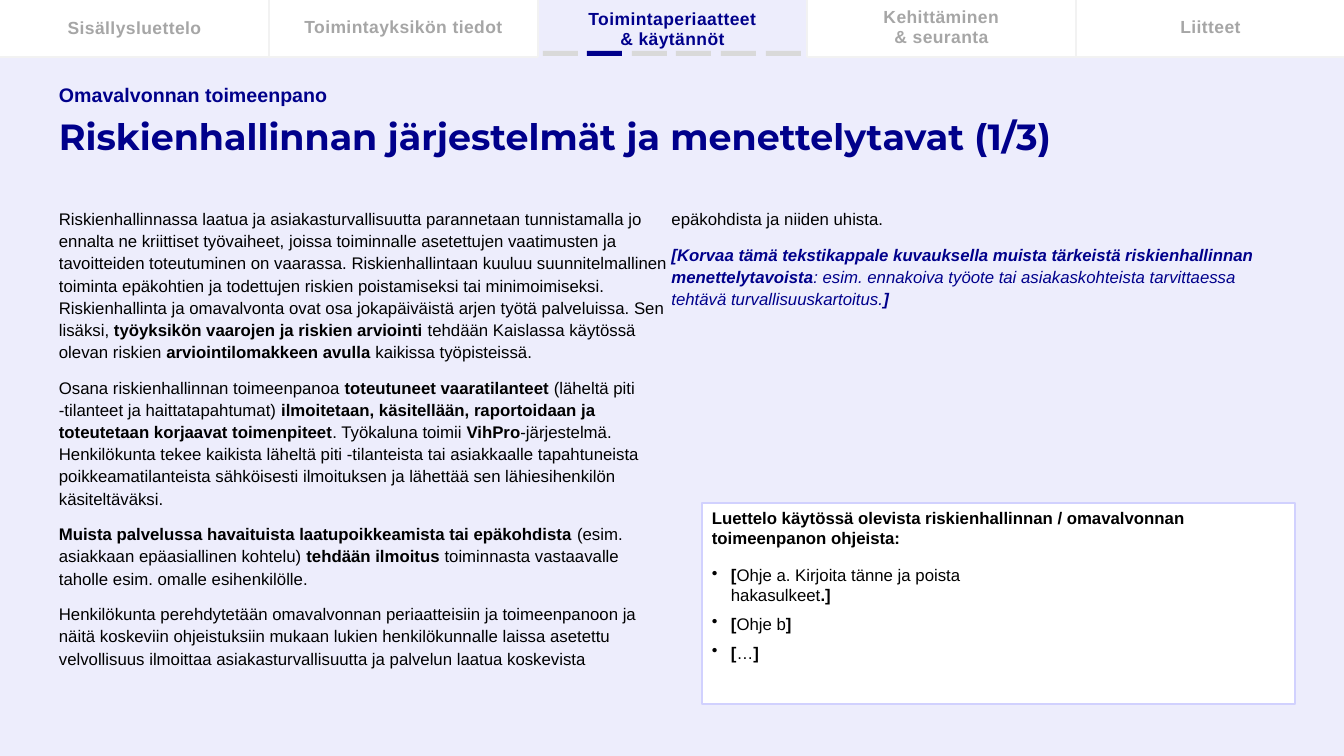
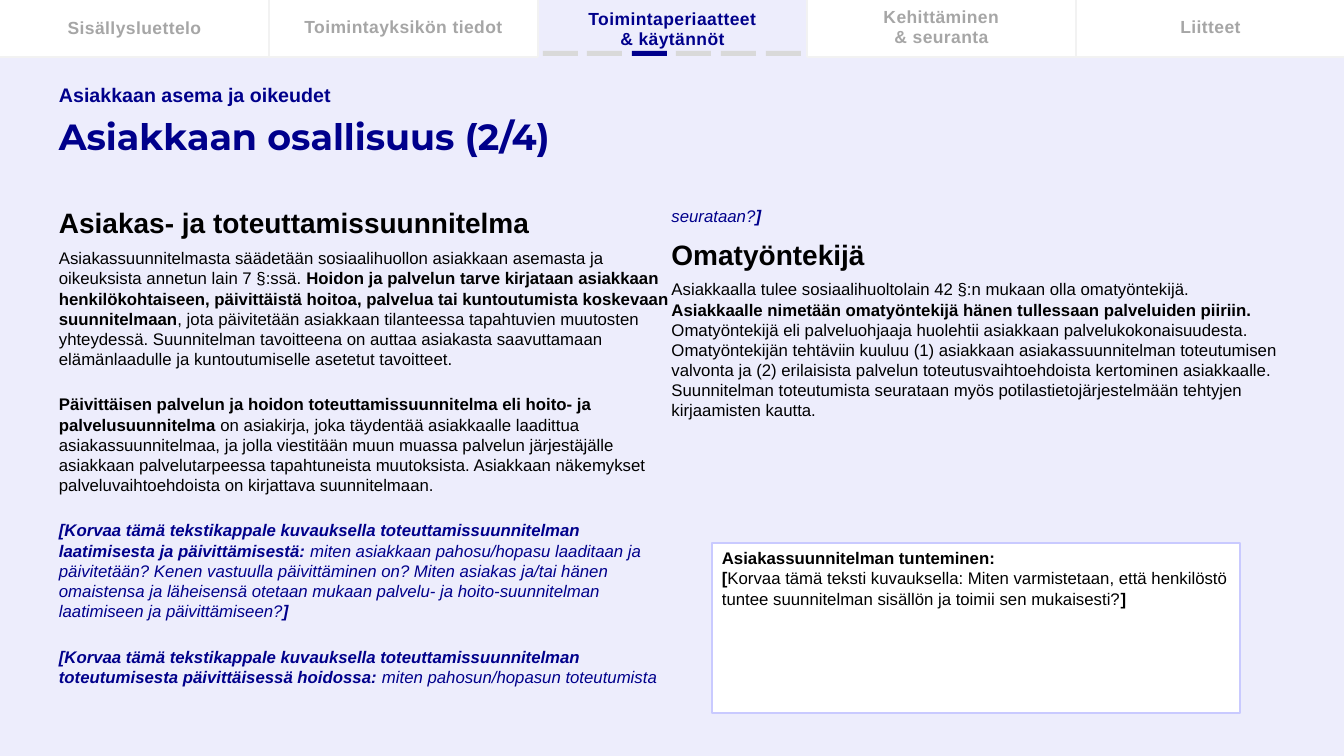
"""Build two self-monitoring plan slides with a shared tab header."""
import lxml.etree
import pptx
import pptx.dml.color
import pptx.enum.shapes
import pptx.enum.text
import pptx.oxml.ns
import pptx.util

EMU_PER_PX = 12192000 / 1344
WIDTH, HEIGHT = 1344, 756
NAVY, BLACK, WHITE, GREY = "00008B", "000000", "FFFFFF", "A6A6A6"
BACKGROUND, DIVIDER, STEP = "EDEDFC", "F2F2F2", "D9D9D9"

TABS = [
    ("Sisällysluettelo", 57),
    ("Toimintayksikön tiedot", 54),
    ("Toimintaperiaatteet\v& käytännöt", 58),
    ("Kehittäminen\v& seuranta", 55),
    ("Liitteet", 54),
]
ACTIVE_TAB = 2
TAB_WIDTH, TAB_HEIGHT = 269, 57
STEP_COUNT, STEP_LEFT, STEP_SPAN = 6, 543, 223

STYLES = {
    "tab": {"size": 12.5, "color": GREY, "bold": True, "align": "CENTER",
            "line": pptx.util.Pt(14), "tracking": 30},
    "topic": {"size": 14, "color": NAVY, "bold": True},
    "title": {"size": 26, "color": NAVY, "bold": True, "font": "Montserrat", "line": 0.9},
    "loose": {"line": 1.1, "before": 7.9, "after": 1.8},
    "loose prompt": {"line": 1.1, "before": 7.9, "after": 1.8, "color": NAVY, "italic": True},
    "heading": {"size": 20, "bold": True, "before": 6, "after": 6},
    "tight": {"after": 1.8},
    "spaced": {"before": 16.2, "after": 1.8},
    "prompt": {"before": 16.2, "after": 1.8, "color": NAVY, "italic": True},
    "plain": {},
    "bullet": {"after": 6, "bullet": "•"},
}
STYLES["active tab"] = {**STYLES["tab"], "color": NAVY}

SLIDES = [
    {
        "topic": "Omavalvonnan toimeenpano",
        "title": "Riskienhallinnan järjestelmät ja menettelytavat (1/3)",
        "step": 1,
        "body_area": (49, 202, 1245, 482),
        "body": [
            ("loose", "Riskienhallinnassa laatua ja asiakasturvallisuutta parannetaan tunnistamalla jo "
             "ennalta ne kriittiset työvaiheet, joissa toiminnalle asetettujen vaatimusten ja "
             "tavoitteiden toteutuminen on vaarassa. Riskienhallintaan kuuluu suunnitelmallinen "
             "toiminta epäkohtien ja todettujen riskien poistamiseksi tai minimoimiseksi. "
             "Riskienhallinta ja omavalvonta ovat osa jokapäiväistä arjen työtä palveluissa. Sen "
             "lisäksi, **työyksikön vaarojen ja riskien arviointi **tehdään Kaislassa käytössä "
             "olevan riskien **arviointilomakkeen avulla** kaikissa työpisteissä."),
            ("loose", "Osana riskienhallinnan toimeenpanoa **toteutuneet vaaratilanteet **(läheltä "
             "piti -tilanteet ja haittatapahtumat) **ilmoitetaan, käsitellään, raportoidaan ja "
             "toteutetaan korjaavat toimenpiteet**. Työkaluna toimii **VihPro**-järjestelmä. "
             "Henkilökunta tekee kaikista läheltä piti -tilanteista tai asiakkaalle tapahtuneista "
             "poikkeamatilanteista sähköisesti ilmoituksen ja lähettää sen lähiesihenkilön "
             "käsiteltäväksi."),
            ("loose", "**Muista palvelussa havaituista laatupoikkeamista tai epäkohdista **(esim. "
             "asiakkaan epäasiallinen kohtelu) **tehdään ilmoitus **toiminnasta vastaavalle "
             "taholle esim. omalle esihenkilölle."),
            ("loose", "Henkilökunta perehdytetään omavalvonnan periaatteisiin ja toimeenpanoon ja "
             "näitä koskeviin ohjeistuksiin mukaan lukien henkilökunnalle laissa asetettu "
             "velvollisuus ilmoittaa asiakasturvallisuutta ja palvelun laatua koskevista "
             "epäkohdista ja niiden uhista."),
            ("loose prompt", "**[Korvaa tämä tekstikappale kuvauksella muista tärkeistä "
             "riskienhallinnan menettelytavoista**: esim. ennakoiva työote tai asiakaskohteista "
             "tarvittaessa tehtävä turvallisuuskartoitus.**]**"),
        ],
        "panel_area": (702, 503, 593, 201),
        "panel_line": ("D1D1FE", 1.5),
        "panel": [
            ("plain", "**Luettelo käytössä olevista riskienhallinnan / omavalvonnan "
             "toimeenpanon ohjeista:**"),
        ],
        "list_area": (702, 560, 593, 144),
        "list": [
            ("bullet", "**[**Ohje a. Kirjoita tänne ja poista hakasulkeet**.]**"),
            ("bullet", "**[**Ohje b**]**"),
            ("bullet", "**[**…**]**"),
        ],
    },
    {
        "topic": "Asiakkaan asema ja oikeudet",
        "title": "Asiakkaan osallisuus (2/4)",
        "step": 2,
        "body_area": (49, 201, 1245, 501),
        "body": [
            ("heading", "Asiakas- ja toteuttamissuunnitelma"),
            ("tight", "Asiakassuunnitelmasta säädetään sosiaalihuollon asiakkaan asemasta ja "
             "oikeuksista annetun lain 7 §:ssä. **Hoidon ja palvelun tarve kirjataan asiakkaan "
             "henkilökohtaiseen, päivittäistä hoitoa, palvelua tai kuntoutumista koskevaan "
             "suunnitelmaan**, jota päivitetään asiakkaan tilanteessa tapahtuvien muutosten "
             "yhteydessä. Suunnitelman tavoitteena on auttaa asiakasta saavuttamaan "
             "elämänlaadulle ja kuntoutumiselle asetetut tavoitteet."),
            ("spaced", "**Päivittäisen palvelun ja hoidon toteuttamissuunnitelma eli hoito- ja "
             "palvelusuunnitelma **on asiakirja, joka täydentää asiakkaalle laadittua "
             "asiakassuunnitelmaa, ja jolla viestitään muun muassa palvelun järjestäjälle "
             "asiakkaan palvelutarpeessa tapahtuneista muutoksista. Asiakkaan näkemykset "
             "palveluvaihtoehdoista on kirjattava suunnitelmaan."),
            ("prompt", "**[Korvaa tämä tekstikappale kuvauksella toteuttamissuunnitelman "
             "laatimisesta ja päivittämisestä: **miten asiakkaan pahosu/hopasu laaditaan ja "
             "päivitetään? Kenen vastuulla päivittäminen on? Miten asiakas ja/tai hänen "
             "omaistensa ja läheisensä otetaan mukaan palvelu- ja hoito-suunnitelman "
             "laatimiseen ja päivittämiseen?**]**"),
            ("prompt", "**[Korvaa tämä tekstikappale kuvauksella toteuttamissuunnitelman "
             "toteutumisesta päivittäisessä hoidossa: **miten pahosun/hopasun toteutumista "
             "seurataan?**]**"),
            ("heading", "Omatyöntekijä"),
            ("tight", "Asiakkaalla tulee sosiaalihuoltolain 42 §:n mukaan olla omatyöntekijä. "
             "**Asiakkaalle nimetään omatyöntekijä hänen tullessaan palveluiden piiriin. "
             "**Omatyöntekijä eli palveluohjaaja huolehtii asiakkaan palvelukokonaisuudesta. "
             "Omatyöntekijän tehtäviin kuuluu (1) asiakkaan asiakassuunnitelman toteutumisen "
             "valvonta ja (2) erilaisista palvelun toteutusvaihtoehdoista kertominen "
             "asiakkaalle. Suunnitelman toteutumista seurataan myös potilastietojärjestelmään "
             "tehtyjen kirjaamisten kautta."),
        ],
        "panel_area": (712, 543, 528, 170),
        "panel_line": ("C9CAFF", 2),
        "panel": [
            ("plain", "**Asiakassuunnitelman tunteminen:**"),
            ("plain", "**[**Korvaa tämä teksti kuvauksella: Miten varmistetaan, että henkilöstö "
             "tuntee suunnitelman sisällön ja toimii sen mukaisesti?**]**"),
        ],
    },
]


def px(length):
    return pptx.util.Emu(round(length * EMU_PER_PX))


def rgb(color):
    return pptx.dml.color.RGBColor.from_string(color)


def format_paragraph(para, style, text, first):
    properties = para._p.get_or_add_pPr()
    if "bullet" in style:
        properties.set("marL", str(px(19)))
        properties.set("indent", str(-px(19)))
        bullet = lxml.etree.SubElement(properties, pptx.oxml.ns.qn("a:buChar"))
        bullet.set("char", style["bullet"])
    para.alignment = getattr(pptx.enum.text.PP_ALIGN, style.get("align", "LEFT"))
    para.line_spacing = style.get("line", 1.0)
    para.space_before = pptx.util.Pt(0 if first else style.get("before", 0))
    para.space_after = pptx.util.Pt(style.get("after", 0))
    if "**" in text:
        for index, piece in enumerate(text.split("**")):
            if piece:
                span = para.add_run()
                span.text = piece
                span.font.bold = index % 2 == 1
    else:
        para.text = text
    for span in para.runs:
        span.font.name = style.get("font", "Arial")
        span.font.size = pptx.util.Pt(style.get("size", 12))
        span.font.color.rgb = rgb(style.get("color", BLACK))
        span.font.italic = style.get("italic", False)
        if style.get("bold"):
            span.font.bold = True
        if "tracking" in style:
            span._r.get_or_add_rPr().set("spc", str(style["tracking"]))


def fill_text(box, paragraphs, anchor="TOP", columns=1):
    frame = box.text_frame
    frame.word_wrap = True
    frame.vertical_anchor = getattr(pptx.enum.text.MSO_ANCHOR, anchor)
    if columns > 1:
        frame._txBody.bodyPr.set("numCol", str(columns))
    for index, (style, text) in enumerate(paragraphs):
        para = frame.add_paragraph() if index else frame.paragraphs[0]
        format_paragraph(para, STYLES[style], text, index == 0)


def add_text(page, area, paragraphs, anchor="TOP", columns=1):
    box = page.shapes.add_textbox(*map(px, area))
    fill_text(box, paragraphs, anchor, columns)


def add_rectangle(page, area, color, line=None):
    box = page.shapes.add_shape(pptx.enum.shapes.MSO_SHAPE.RECTANGLE, *map(px, area))
    box.shadow.inherit = False
    box.fill.solid()
    box.fill.fore_color.rgb = rgb(color)
    if line:
        box.line.color.rgb = rgb(line[0])
        box.line.width = pptx.util.Pt(line[1])
    else:
        box.line.fill.background()
    return box


def add_divider(page, *ends):
    line = page.shapes.add_connector(pptx.enum.shapes.MSO_CONNECTOR.STRAIGHT, *map(px, ends))
    line.line.color.rgb = rgb(DIVIDER)
    line.line.width = pptx.util.Pt(1.5)
    lxml.etree.SubElement(line._element.spPr, pptx.oxml.ns.qn("a:effectLst"))


def add_header(page, active_step):
    active_left = ACTIVE_TAB * TAB_WIDTH
    active_right = active_left + TAB_WIDTH
    add_rectangle(page, (0, 0, WIDTH, TAB_HEIGHT), WHITE)
    add_rectangle(page, (active_left, 0, TAB_WIDTH, TAB_HEIGHT), BACKGROUND)
    for index, (label, height) in enumerate(TABS):
        style = "active tab" if index == ACTIVE_TAB else "tab"
        left = index * TAB_WIDTH
        add_text(page, (left, 0, TAB_WIDTH, height), [(style, label)], "MIDDLE")
        if index:
            add_divider(page, left, 0, left, TAB_HEIGHT)
    for start, end in ((0, active_left), (active_right, WIDTH)):
        add_divider(page, start, TAB_HEIGHT, end, TAB_HEIGHT)
    for index in range(STEP_COUNT):
        left = STEP_LEFT + index * STEP_SPAN // (STEP_COUNT - 1)
        add_rectangle(page, (left, 51, 35, 5), NAVY if index == active_step else STEP)


def add_page(deck, content):
    page = deck.slides.add_slide(deck.slide_layouts[6])
    add_header(page, content["step"])
    add_text(page, (49, 83, 600, 24), [("topic", content["topic"])], "MIDDLE")
    add_text(page, (49, 91, 1245, 96), [("title", content["title"])], "MIDDLE")
    add_text(page, content["body_area"], content["body"], columns=2)
    panel = add_rectangle(page, content["panel_area"], WHITE, content["panel_line"])
    fill_text(panel, content["panel"])
    if "list" in content:
        add_text(page, content["list_area"], content["list"], columns=2)


def main():
    deck = pptx.Presentation()
    deck.slide_width, deck.slide_height = px(WIDTH), px(HEIGHT)
    backdrop = deck.slide_master.background.fill
    backdrop.solid()
    backdrop.fore_color.rgb = rgb(BACKGROUND)
    for content in SLIDES:
        add_page(deck, content)
    deck.save("out.pptx")


if __name__ == "__main__":
    main()
